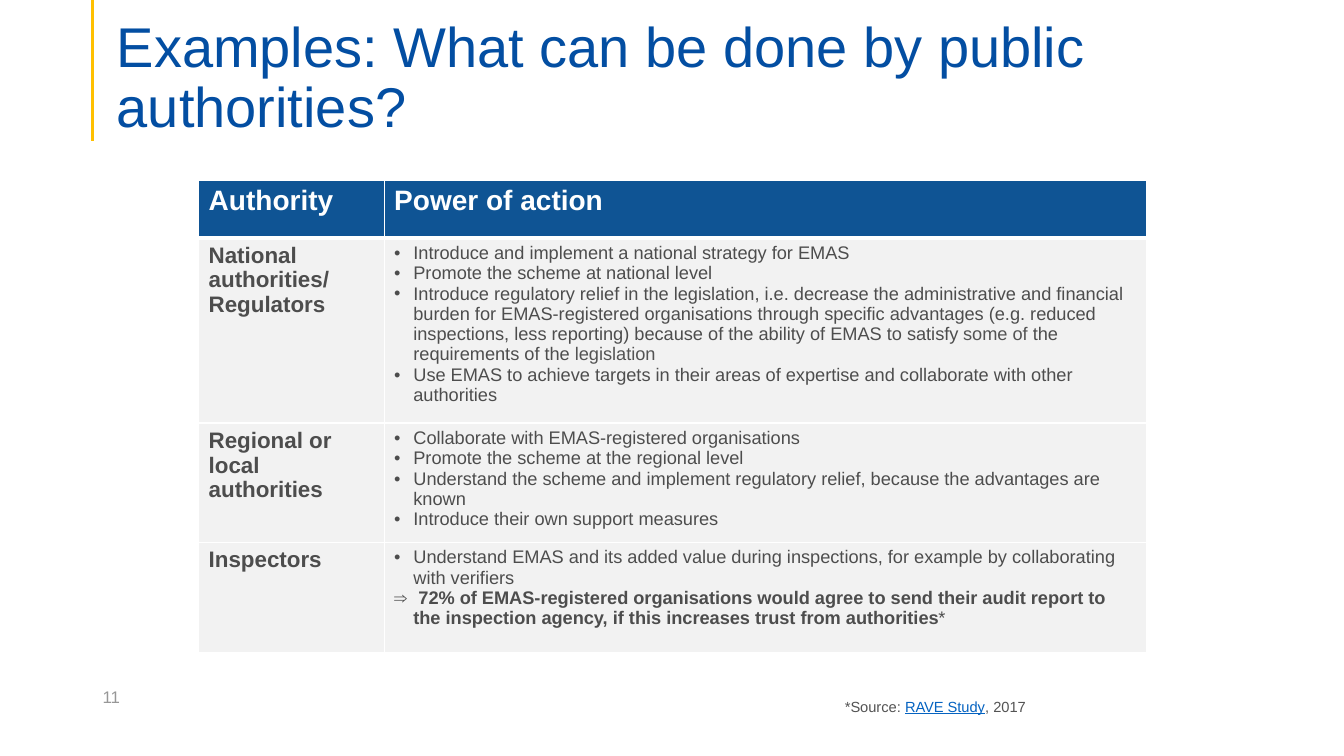
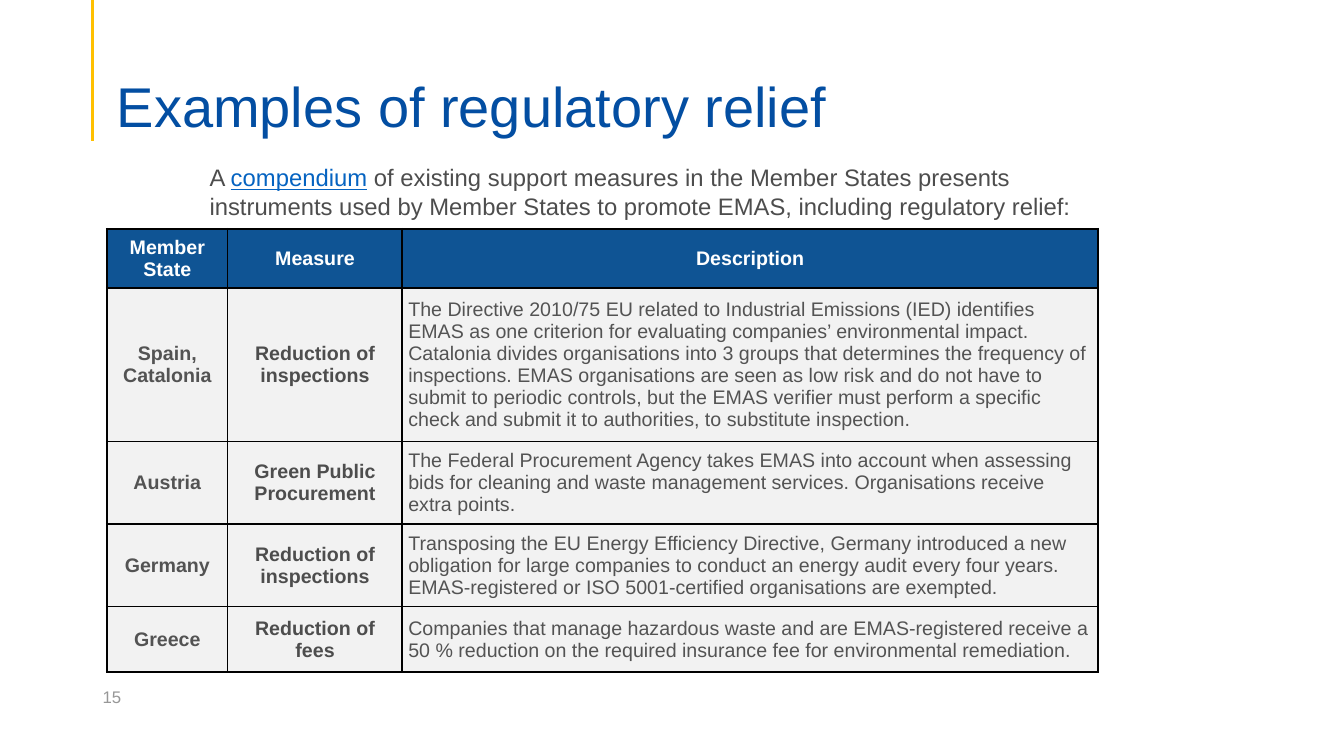
from lxml.etree import SubElement
from pptx import Presentation
from pptx.dml.color import RGBColor
from pptx.enum.shapes import MSO_CONNECTOR
from pptx.enum.text import MSO_ANCHOR as Anchor, PP_ALIGN as Align
from pptx.oxml.ns import qn
from pptx.util import Emu, Pt

PX = 9144
FONT = "Arial"
BLUE, NAVY, GOLD, LINK = "034EA2", "0F5494", "FFC000", "0563C1"
WHITE, BLACK, PALE = "FFFFFF", "000000", "F2F2F2"
DARK, GREY, LIGHT = "4D4D4D", "535353", "979797"
BULLET, ARROW = "•", "⇒"

POWERS = [
    ("National authorities/ Regulators", [
        (BULLET, [("Introduce and implement a national strategy for EMAS", {})]),
        (BULLET, [("Promote the scheme at national level", {})]),
        (BULLET, [
            ("Introduce regulatory relief in the legislation, i.e. decrease the administrative and "
             "financial burden for EMAS-registered organisations through specific advantages (e.g. "
             "reduced inspections, less reporting) because of the ability of EMAS to satisfy ", {}),
            ("some of ", {"color": GREY}),
            ("the requirements of the ", {}),
            ("legislation", {"color": GREY}),
        ]),
        (BULLET, [("Use EMAS to achieve targets in their areas of expertise and collaborate with "
                   "other authorities", {})]),
    ]),
    ("Regional or local authorities", [
        (BULLET, [("Collaborate with EMAS-registered organisations", {})]),
        (BULLET, [("Promote the scheme at the regional level", {})]),
        (BULLET, [("Understand the scheme and implement regulatory relief, because the advantages "
                   "are known", {})]),
        (BULLET, [("Introduce their own support measures", {})]),
    ]),
    ("Inspectors", [
        (BULLET, [("Understand EMAS and its added value during inspections, for example by "
                   "collaborating with verifiers", {})]),
        (ARROW, [
            (" 72% of EMAS-registered organisations would agree to send their audit report to the "
             "inspection agency, if this increases trust from authorities", {"bold": True}),
            ("*", {}),
        ]),
    ]),
]

MEASURES = [
    ("Spain, Catalonia", "Reduction of inspections",
     "The Directive 2010/75 EU related to Industrial Emissions (IED) identifies EMAS as one "
     "criterion for evaluating companies’ environmental impact. Catalonia divides organisations "
     "into 3 groups that determines the frequency of inspections. EMAS organisations are seen as "
     "low risk and do not have to submit to periodic controls, but the EMAS verifier must perform "
     "a specific check and submit it to authorities, to substitute inspection."),
    ("Austria", "Green Public Procurement",
     "The Federal Procurement Agency takes EMAS into account when assessing bids for cleaning and "
     "waste management services. Organisations receive extra points."),
    ("Germany", "Reduction of inspections",
     "Transposing the EU Energy Efficiency Directive, Germany introduced a new obligation for "
     "large companies to conduct an energy audit every four years. EMAS-registered or ISO "
     "5001-certified organisations are exempted."),
    ("Greece", "Reduction of fees",
     "Companies that manage hazardous waste and are EMAS-registered receive a 50 % reduction on "
     "the required insurance fee for environmental remediation."),
]


def px(*lengths):
    """Turn px lengths into EMU."""
    return [Emu(length * PX) for length in lengths]


def rgb(value):
    """Turn a hex string into a colour."""
    return RGBColor.from_string(value)


def add_run(paragraph, text, size, color=DARK, bold=False, underline=False):
    """Append one formatted run."""
    run = paragraph.add_run()
    run.text = text
    font = run.font
    font.name, font.size = FONT, Pt(size)
    font.bold, font.underline = bold, underline
    font.color.rgb = rgb(color)


def set_insets(target, insets):
    """Set left, top, right and bottom margins of a frame or cell."""
    (target.margin_left, target.margin_top,
     target.margin_right, target.margin_bottom) = px(*insets)


def add_text(slide, box, runs, size, insets=(10, 5, 10, 5), anchor=Anchor.TOP):
    """Add a one-paragraph text box and return its paragraph."""
    frame = slide.shapes.add_textbox(*px(*box)).text_frame
    frame.word_wrap = True
    frame.vertical_anchor = anchor
    set_insets(frame, insets)
    paragraph = frame.paragraphs[0]
    for text, style in runs:
        add_run(paragraph, text, size, **style)
    return paragraph


def add_base(presentation, title, number):
    """Add a slide with accent line, title and slide number."""
    slide = presentation.slides.add_slide(presentation.slide_layouts[6])
    accent = slide.shapes.add_connector(MSO_CONNECTOR.STRAIGHT, *px(92, 0, 92, 140))
    accent.line.color.rgb = rgb(GOLD)
    accent.line.width = Pt(2.25)
    SubElement(accent._element.spPr, qn("a:effectLst"))
    heading = add_text(slide, (106, 53, 1150, 86), [(title, {"color": BLUE})], 40,
                       (10, 5, 10, 0), Anchor.BOTTOM)
    heading.line_spacing = 0.9
    add_text(slide, (92, 671, 300, 40), [(number, {"color": LIGHT})], 12, anchor=Anchor.MIDDLE)
    return slide


def add_table(slide, corner, widths, heights):
    """Add an unstyled table with the given column widths and row heights."""
    frame = slide.shapes.add_table(len(heights), len(widths),
                                   *px(*corner, sum(widths), sum(heights)))
    table = frame.table
    table.horz_banding = False
    for column, width in zip(table.columns, px(*widths)):
        column.width = width
    for row, height in zip(table.rows, px(*heights)):
        row.height = height
    return table


def style_cell(cell, fill, color, widths, insets, anchor=Anchor.TOP):
    """Set fill, margins and left, right, top and bottom border widths."""
    set_insets(cell, insets)
    cell.vertical_anchor = anchor
    properties = cell._tc.get_or_add_tcPr()
    for side, width in zip("LRTB", widths):
        border = SubElement(properties, qn(f"a:ln{side}"), w=str(Pt(width)))
        SubElement(SubElement(border, qn("a:solidFill")), qn("a:srgbClr"), val=color)
    cell.fill.solid()
    cell.fill.fore_color.rgb = rgb(fill)


def add_bullets(frame, items, size):
    """Fill a frame with hanging bullet paragraphs."""
    for index, (mark, runs) in enumerate(items):
        paragraph = frame.add_paragraph() if index else frame.paragraphs[0]
        properties = paragraph._p.get_or_add_pPr()
        properties.set("marL", str(19 * PX))
        properties.set("indent", str(-19 * PX))
        SubElement(properties, qn("a:buFont"), typeface=FONT)
        SubElement(properties, qn("a:buChar"), char=mark)
        for text, style in runs:
            add_run(paragraph, text, size, **style)


def build_powers(presentation):
    """Build the slide on what authorities can do."""
    slide = add_base(presentation, "Examples: What can be done by public authorities?", "11")
    table = add_table(slide, (197, 179), (184, 756), (57, 177, 118, 109))
    for column, text in enumerate(("Authority", "Power of action")):
        cell = table.cell(0, column)
        add_run(cell.text_frame.paragraphs[0], text, 20, WHITE, True)
    for row, (authority, actions) in enumerate(POWERS, 1):
        add_run(table.cell(row, 0).text_frame.paragraphs[0], authority, 16, bold=True)
        add_bullets(table.cell(row, 1).text_frame, actions, 13)
    for row in range(len(POWERS) + 1):
        widths = (1, 1, 3 if row == 1 else 1, 1 if row else 3)
        for cell in table.rows[row].cells:
            style_cell(cell, PALE if row else NAVY, WHITE, widths, (10, 5, 10, 5))
    source = [("*Source: ", {"color": GREY}),
              ("RAVE Study", {"color": LINK, "underline": True}),
              (", 2017", {"color": GREY})]
    add_text(slide, (833, 687, 304, 21), source, 10.5, (5, 5, 5, 5))


def build_measures(presentation):
    """Build the slide on regulatory relief by Member State."""
    slide = add_base(presentation, "Examples of regulatory relief", "15")
    rows = [("Member State", "Measure", "Description"), *MEASURES]
    table = add_table(slide, (106, 227), (120, 173, 690), (55, 149, 78, 81, 65))
    last = len(rows) - 1
    for row, texts in enumerate(rows):
        for column, text in enumerate(texts):
            cell = table.cell(row, column)
            paragraph = cell.text_frame.paragraphs[0]
            described = row > 0 and column == 2
            paragraph.alignment = Align.LEFT if described else Align.CENTER
            color = (DARK if column == 1 else GREY) if row else WHITE
            add_run(paragraph, text, 14, color, not described)
            widths = (1 if column == 1 else 1.5, 1 if column == 0 else 1.5,
                      1 if row else 1.5, 1.5 if row == last else 1)
            style_cell(cell, PALE if row else NAVY, BLACK, widths, (6, 6, 6, 6), Anchor.MIDDLE)
    intro = [("A ", {}),
             ("compendium", {"color": LINK, "underline": True}),
             (" of existing support measures in the Member States presents instruments used by "
              "Member States to promote EMAS, including regulatory relief:", {})]
    add_text(slide, (198, 157, 890, 70), intro, 17)


def main():
    """Build and save the presentation."""
    presentation = Presentation()
    presentation.slide_width, presentation.slide_height = px(1333, 750)
    build_powers(presentation)
    build_measures(presentation)
    presentation.save("out.pptx")


if __name__ == "__main__":
    main()
